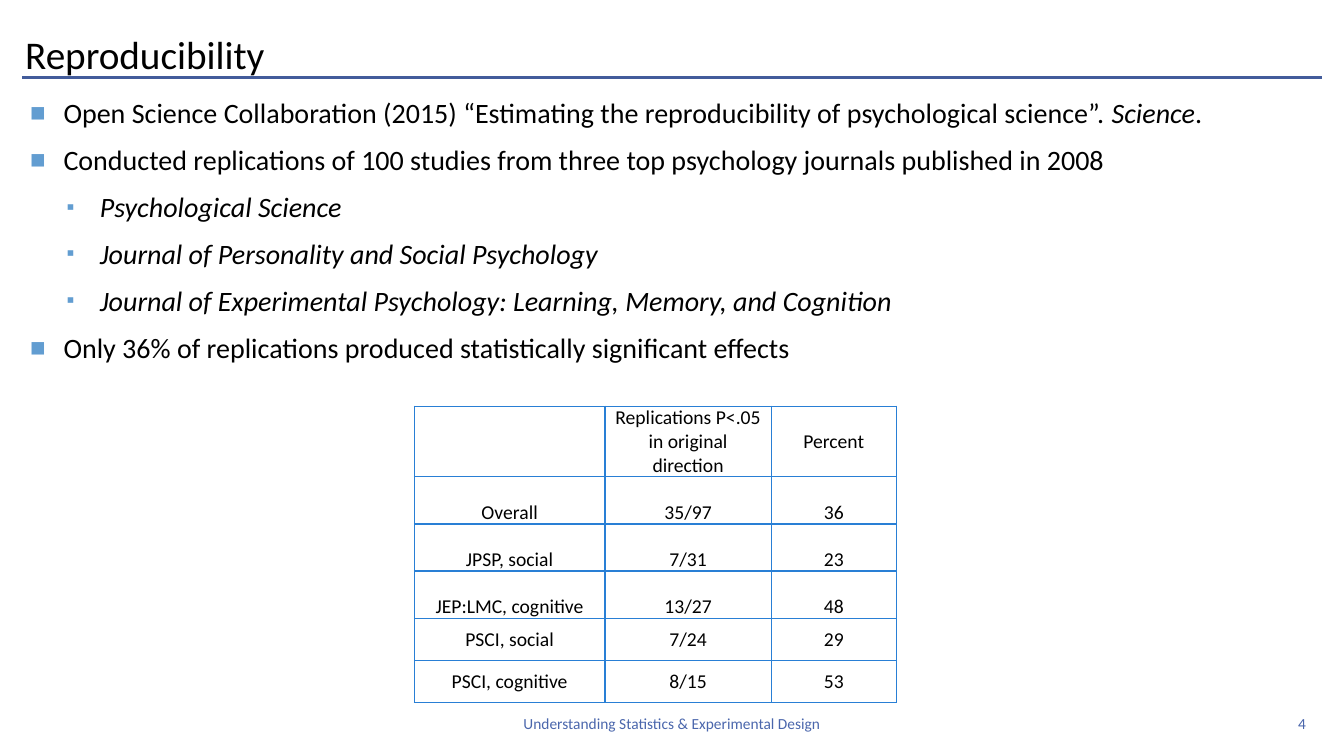
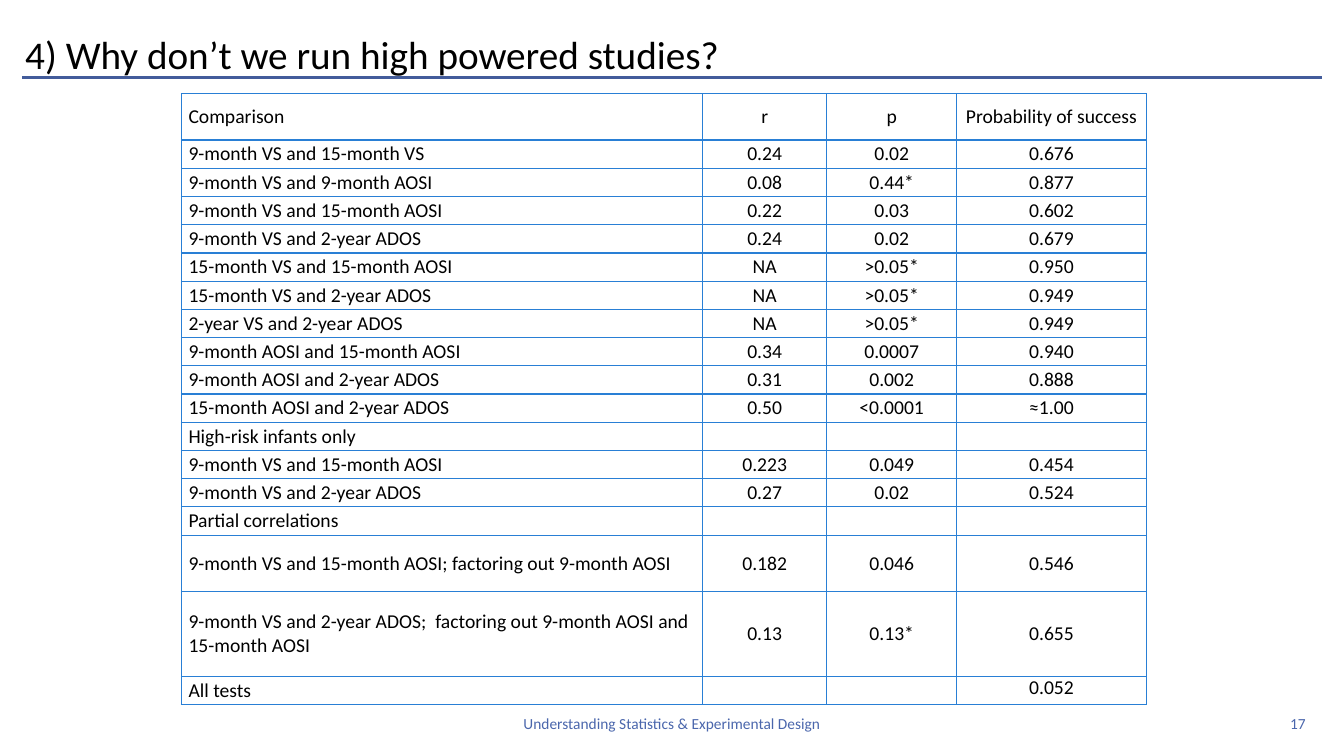
from lxml import etree
from pptx import Presentation
from pptx.dml.color import RGBColor
from pptx.enum.shapes import MSO_CONNECTOR, MSO_SHAPE
from pptx.enum.text import MSO_ANCHOR, MSO_AUTO_SIZE, PP_ALIGN
from pptx.oxml.ns import qn
from pptx.util import Emu, Pt

LEFT, CENTER, RIGHT = PP_ALIGN.LEFT, PP_ALIGN.CENTER, PP_ALIGN.RIGHT
TOP, MIDDLE, BOTTOM = MSO_ANCHOR.TOP, MSO_ANCHOR.MIDDLE, MSO_ANCHOR.BOTTOM
STRAIGHT, RECTANGLE, NO_AUTOFIT = MSO_CONNECTOR.STRAIGHT, MSO_SHAPE.RECTANGLE, MSO_AUTO_SIZE.NONE

EMU_PER_PX = 9144
SLIDE_SIZE = (1333, 750)
TITLE_ONLY, TITLE_AND_BODY = 5, 1
FONT = "Calibri"
BLACK, WHITE = "000000", "FFFFFF"
FOOTER_BLUE, RULE_BLUE, BULLET_BLUE, BORDER_BLUE = "4A66AC", "435C9B", "629DD1", "297FD5"

TITLE_BOX = (15, 0, 1206, 82)
BODY_BOX = (20, 90, 1251, 572)
RULE_BOX = (22, 77, 1289, 0)
FOOTER_BOX = (326, 698, 681, 40)
NUMBER_BOX = (1167, 698, 138, 40)

TITLE_TEXT = {"size": Pt(28), "name": FONT}
BODY_TEXT = {"size": Pt(20), "name": FONT}
TABLE_TEXT = {"size": Pt(14), "name": FONT}
FOOTER_TEXT = {"size": Pt(11), "name": FONT}
BULLETS = [
    {"char": "■", "percent": 92, "indent": 33},
    {"char": "▪", "percent": 80, "indent": 69},
]
HANGING = 33

FOOTER = "Understanding Statistics & Experimental Design"

FINDINGS = [
    (0, [("Open Science Collaboration (2015) “Estimating the reproducibility of psychological science”. ", False),
         ("Science", True), (".", False)]),
    (0, [("Conducted replications of 100 studies from three top psychology journals published in 2008", False)]),
    (1, [("Psychological Science", True)]),
    (1, [("Journal of Personality and Social Psychology", True)]),
    (1, [("Journal of Experimental Psychology: Learning, Memory, and Cognition", True)]),
    (0, [("Only 36% of replications produced statistically significant effects", False)]),
]

REPLICATIONS = {
    "origin": (411, 403),
    "columns": [189, 165, 124],
    "heights": [70] + [42] * 5,
    "inset": 8,
    "first_align": CENTER,
    "double_spaced": {1, 2, 3},
    "top_cells": set(),
    "rows": [
        ("", "Replications P<.05 in original direction", "Percent"),
        ("Overall", "35/97", "36"),
        ("JPSP, social", "7/31", "23"),
        ("JEP:LMC, cognitive", "13/27", "48"),
        ("PSCI, social", "7/24", "29"),
        ("PSCI, cognitive", "8/15", "53"),
    ],
}

COMPARISONS = {
    "origin": (180, 93),
    "columns": [517, 123, 129, 188],
    "heights": [46] + [28] * 14 + [56, 84, 28],
    "inset": 7,
    "first_align": LEFT,
    "double_spaced": set(),
    "top_cells": {(17, 3)},
    "rows": [
        ("Comparison", "r", "p", "Probability of success"),
        ("9-month VS and 15-month VS", "0.24", "0.02", "0.676"),
        ("9-month VS and 9-month AOSI", "0.08", "0.44*", "0.877"),
        ("9-month VS and 15-month AOSI", "0.22", "0.03", "0.602"),
        ("9-month VS and 2-year ADOS", "0.24", "0.02", "0.679"),
        ("15-month VS and 15-month AOSI", "NA", ">0.05*", "0.950"),
        ("15-month VS and 2-year ADOS", "NA", ">0.05*", "0.949"),
        ("2-year VS and 2-year ADOS", "NA", ">0.05*", "0.949"),
        ("9-month AOSI and 15-month AOSI", "0.34", "0.0007", "0.940"),
        ("9-month AOSI and 2-year ADOS", "0.31", "0.002", "0.888"),
        ("15-month AOSI and 2-year ADOS", "0.50", "<0.0001", "≈1.00"),
        ("High-risk infants only", "", "", ""),
        ("9-month VS and 15-month AOSI", "0.223", "0.049", "0.454"),
        ("9-month VS and 2-year ADOS", "0.27", "0.02", "0.524"),
        ("Partial correlations", "", "", ""),
        ("9-month VS and 15-month AOSI; factoring out 9-month AOSI", "0.182", "0.046", "0.546"),
        ("9-month VS and 2-year ADOS;  factoring out 9-month AOSI and 15-month AOSI", "0.13", "0.13*", "0.655"),
        ("All tests", "", "", "0.052"),
    ],
}


def px(length):
    """Turn px into EMU."""
    return Emu(length * EMU_PER_PX)


def box_emu(box):
    """Turn a px box into EMU lengths."""
    return [px(length) for length in box]


def paint(color_format, color):
    """Give a fill a solid colour from a hex string."""
    color_format.solid()
    color_format.fore_color.rgb = RGBColor.from_string(color)


def assign(target, values):
    """Set each attribute of target named in values."""
    for name, value in values.items():
        setattr(target, name, value)


def write(paragraph, text, style, color=BLACK, italic=False):
    """Add one formatted run to a paragraph."""
    run = paragraph.add_run()
    run.text = text
    assign(run.font, {**style, "italic": italic})
    paint(run.font.fill, color)


def place(shape, box):
    """Move a placeholder to a px box."""
    assign(shape, dict(zip(("left", "top", "width", "height"), box_emu(box))))


def add_title(slide, box, heading):
    """Fill the title placeholder."""
    title = slide.shapes.title
    place(title, box)
    frame = title.text_frame
    assign(frame, {"vertical_anchor": BOTTOM, "word_wrap": True, "auto_size": NO_AUTOFIT})
    frame.paragraphs[0].alignment = LEFT
    write(frame.paragraphs[0], heading, TITLE_TEXT)


def add_bullet(paragraph, char, percent, indent):
    """Give a paragraph a coloured hanging bullet."""
    properties = paragraph._p.get_or_add_pPr()
    properties.set("marL", str(px(indent)))
    properties.set("indent", str(px(-HANGING)))
    color = etree.SubElement(properties, qn("a:buClr"))
    etree.SubElement(color, qn("a:srgbClr"), val=BULLET_BLUE)
    etree.SubElement(properties, qn("a:buSzPct"), val=str(percent * 1000))
    etree.SubElement(properties, qn("a:buChar"), char=char)


def add_body(slide, box, points):
    """Fill the body placeholder with a two-level list."""
    body = slide.placeholders[1]
    place(body, box)
    frame = body.text_frame
    assign(frame, {"vertical_anchor": TOP, "word_wrap": True, "auto_size": NO_AUTOFIT})
    for index, (level, pieces) in enumerate(points):
        paragraph = frame.add_paragraph() if index else frame.paragraphs[0]
        add_bullet(paragraph, **BULLETS[level])
        assign(paragraph, {"level": level, "space_before": Pt(3.5 if index else 0), "space_after": Pt(6)})
        for text, italic in pieces:
            write(paragraph, text, BODY_TEXT, italic=italic)


def add_border(cell):
    """Draw a thin line on each side of a cell."""
    properties = cell._tc.get_or_add_tcPr()
    for side in ("lnL", "lnR", "lnT", "lnB"):
        line = etree.SubElement(properties, qn(f"a:{side}"), w=str(Pt(1)))
        fill = etree.SubElement(line, qn("a:solidFill"))
        etree.SubElement(fill, qn("a:srgbClr"), val=BORDER_BLUE)


def fill_cell(cell, text, align, inset, anchor, spacing):
    """Format one table cell and write its text."""
    assign(cell, {"margin_left": px(inset), "margin_right": px(inset), "margin_top": 0,
                  "margin_bottom": 0, "vertical_anchor": anchor})
    add_border(cell)
    cell.fill.background()
    paragraph = cell.text_frame.paragraphs[0]
    assign(paragraph, {"alignment": align, "line_spacing": spacing})
    if text:
        write(paragraph, text, TABLE_TEXT)
    else:
        paragraph._p.get_or_add_endParaRPr().set("sz", str(TABLE_TEXT["size"].centipoints))


def add_results(slide, origin, columns, heights, inset, first_align, double_spaced, top_cells, rows):
    """Add a bordered table of results."""
    box = (*origin, sum(columns), sum(heights))
    results = slide.shapes.add_table(len(rows), len(columns), *box_emu(box)).table
    assign(results, {"first_row": False, "horz_banding": False})
    for column, width in zip(results.columns, columns):
        column.width = px(width)
    for row_index, (row, height) in enumerate(zip(rows, heights)):
        results.rows[row_index].height = px(height)
        spacing = 2.0 if row_index in double_spaced else 1.0
        for column_index, text in enumerate(row):
            anchor = TOP if (row_index, column_index) in top_cells else MIDDLE
            align = CENTER if column_index else first_align
            fill_cell(results.cell(row_index, column_index), text, align, inset, anchor, spacing)


def add_rule(slide, box):
    """Draw the line under the title."""
    left, top, width, height = box
    rule = slide.shapes.add_connector(STRAIGHT, *box_emu((left, top, left + width, top + height)))
    paint(rule.line.fill, RULE_BLUE)
    rule.line.width = Pt(2.25)
    etree.SubElement(rule._element.spPr, qn("a:effectLst"))


def write_footer(shape, text, align):
    """Write footer text into a shape."""
    frame = shape.text_frame
    assign(frame, {"word_wrap": True, "vertical_anchor": MIDDLE})
    frame.paragraphs[0].alignment = align
    write(frame.paragraphs[0], text, FOOTER_TEXT, FOOTER_BLUE)


def add_frame(slide, heading, number):
    """Add the title, rule, footer and slide number."""
    add_title(slide, TITLE_BOX, heading)
    add_rule(slide, RULE_BOX)
    page = slide.shapes.add_shape(RECTANGLE, *box_emu(NUMBER_BOX))
    page.shadow.inherit = False
    paint(page.fill, WHITE)
    page.line.fill.background()
    write_footer(page, str(number), RIGHT)
    write_footer(slide.shapes.add_textbox(*box_emu(FOOTER_BOX)), FOOTER, CENTER)


def add_slide(deck, layout, heading, number):
    """Add a slide with the shared frame."""
    slide = deck.slides.add_slide(deck.slide_layouts[layout])
    paint(slide.background.fill, WHITE)
    add_frame(slide, heading, number)
    return slide


def main():
    """Build and save the deck."""
    deck = Presentation()
    deck.slide_width, deck.slide_height = box_emu(SLIDE_SIZE)
    reproducibility = add_slide(deck, TITLE_AND_BODY, "Reproducibility", 4)
    add_body(reproducibility, BODY_BOX, FINDINGS)
    add_results(reproducibility, **REPLICATIONS)
    power = add_slide(deck, TITLE_ONLY, "4) Why don’t we run high powered studies?", 17)
    add_results(power, **COMPARISONS)
    deck.save("out.pptx")


if __name__ == "__main__":
    main()
